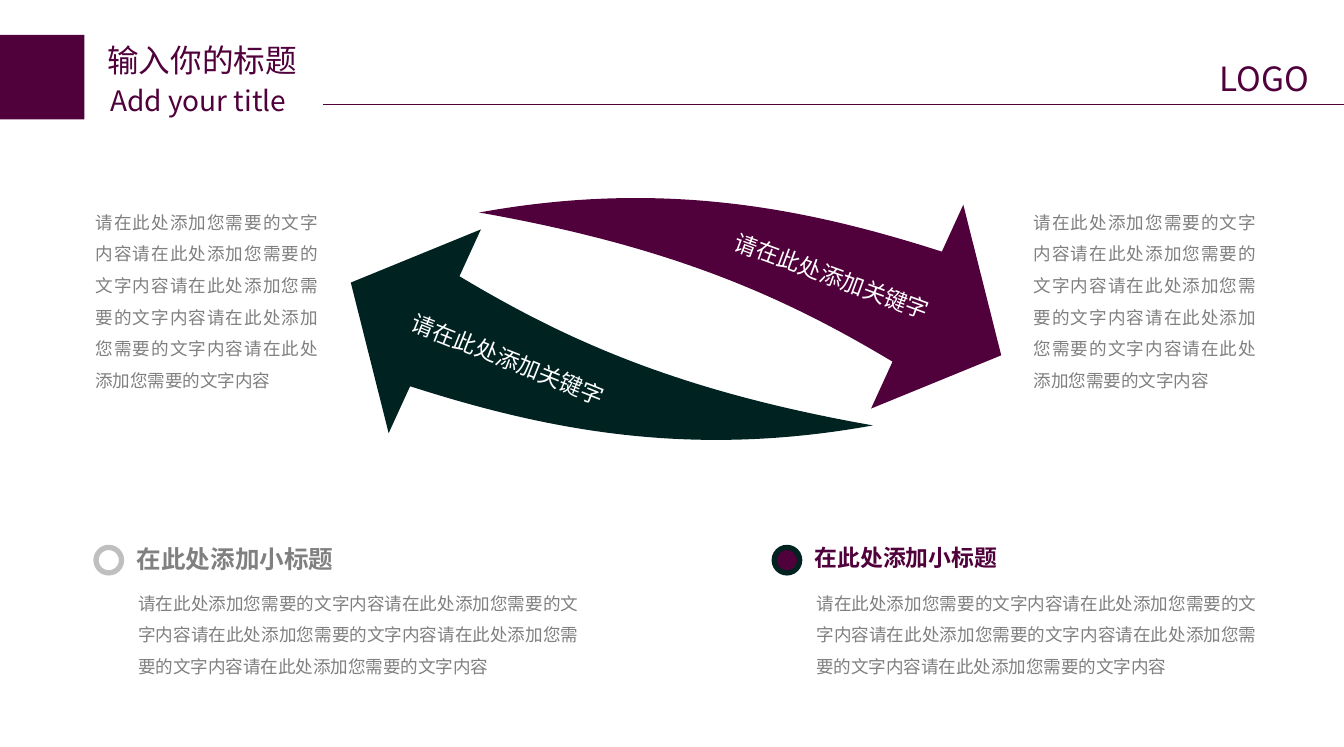
from lxml import etree
from pptx import Presentation
from pptx.dml.color import RGBColor
from pptx.enum.shapes import MSO_CONNECTOR, MSO_SHAPE
from pptx.enum.text import MSO_ANCHOR, PP_ALIGN
from pptx.oxml.ns import qn
from pptx.util import Pt

RECTANGLE, OVAL = MSO_SHAPE.RECTANGLE, MSO_SHAPE.OVAL
STRAIGHT = MSO_CONNECTOR.STRAIGHT
MIDDLE = MSO_ANCHOR.MIDDLE
LEFT, RIGHT, JUSTIFY = PP_ALIGN.LEFT, PP_ALIGN.RIGHT, PP_ALIGN.JUSTIFY

PLUM = RGBColor(0x50, 0x00, 0x3B)
DARK_TEAL = RGBColor(0x00, 0x22, 0x21)
GRAY = RGBColor(0x80, 0x80, 0x80)
LIGHT_GRAY = RGBColor(0xBF, 0xBF, 0xBF)
WHITE = RGBColor(0xFF, 0xFF, 0xFF)
CJK_FONT = "Noto Sans CJK SC"

SLIDE_W, SLIDE_H = 765.35, 425.2
BODY = "请在此处添加您需要的文字内容" * 5
KEYWORD = "请在此处添加关键字"
SUBTITLE = "在此处添加小标题"

# text, box, size, wrap
HEADER = [
    ("输入你的标题", (54, 19.8, 124.6, 28.8), 18, True),
    ("Add your title", (55.8, 43.9, 124.6, 26.6), 16, True),
    ("LOGO", (687.6, 29.5, 69.1, 30.2), 19, False),
]

# The upper arrow; a step of three points is a curve, a step of one a line.
ARROW_TAIL = (272.9, 121)
ARROW_STEPS = [
    [(376.6, 102.2), (457.9, 118.1), (536.4, 143.3)],
    [(548.6, 116.6)],
    [(570.2, 202.3)],
    [(496.1, 232.6)],
    [(508.3, 205.9)],
    [(447.1, 169.2), (383, 140.4), ARROW_TAIL],
]
ARROW_CENTER = (385, 181.6)

# colour, half turn, label left, label top, label rotation, label alignment
ARROWS = [
    (PLUM, False, 415.6, 146.2, 20.2, RIGHT),
    (DARK_TEAL, True, 231.1, 193.7, 21.8, LEFT),
]
SIDE_TEXT_LEFTS = [588.6, 54.4]

# left, dot fill, dot line, title size, title colour
SECTIONS = [
    (54.7, WHITE, LIGHT_GRAY, 14, GRAY),
    (440.9, PLUM, DARK_TEAL, 13, PLUM),
]


def points(*lengths):
    return [Pt(length) for length in lengths]


def write(shape, text, size, color, font=CJK_FONT, align=LEFT, bold=False,
          spacing=None, inset=7.2, wrap=True):
    frame = shape.text_frame
    frame.word_wrap = wrap
    frame.margin_left = frame.margin_right = Pt(inset)
    frame.margin_top = frame.margin_bottom = Pt(3.6 if inset == 7.2 else 3)
    paragraph = frame.paragraphs[0]
    paragraph.text = text
    paragraph.alignment = align
    if spacing:
        paragraph.line_spacing = spacing
    style = paragraph.font
    style.size, style.bold, style.name = Pt(size), bold, font
    style.color.rgb = color
    latin = paragraph._p.pPr.find(".//" + qn("a:latin"))
    latin.addnext(etree.Element(qn("a:ea"), typeface=CJK_FONT))


def paint(shape, fill, line=None):
    shape.shadow.inherit = False
    shape.fill.solid()
    shape.fill.fore_color.rgb = fill
    if line is None:
        shape.line.fill.background()
    else:
        shape.line.color.rgb = line
        shape.line.width = Pt(3)


def add_body(shapes, left, top, width, height):
    box = shapes.add_textbox(*points(left, top, width, height))
    write(box, BODY, 10, GRAY, "Arial", JUSTIFY, spacing=1.5, inset=0)


def add_backdrop(shapes):
    """Add the translucent white panel that covers the background."""
    panel = shapes.add_shape(RECTANGLE, *points(0, 0, SLIDE_W, SLIDE_H))
    paint(panel, WHITE)
    tint = panel._element.spPr.find(".//" + qn("a:srgbClr"))
    etree.SubElement(tint, qn("a:alpha"), val="40000")


def add_header(shapes):
    block = shapes.add_shape(RECTANGLE, *points(0, 19.9, 48.1, 48.1))
    paint(block, PLUM)
    for text, box, size, wrap in HEADER:
        write(shapes.add_textbox(*points(*box)), text, size, PLUM, wrap=wrap)
    rule = shapes.add_connector(STRAIGHT, *points(184.1, 59.5, SLIDE_W, 59.5))
    rule.line.color.rgb = PLUM
    rule.line.width = Pt(0.75)
    etree.SubElement(rule._element.spPr, qn("a:effectLst"))


def add_arrow(shapes, half_turn):
    """Draw straight legs through all points, then merge each curve's three legs."""
    outline = [ARROW_TAIL] + [point for step in ARROW_STEPS for point in step]
    if half_turn:
        center_x, center_y = ARROW_CENTER
        outline = [(2 * center_x - x, 2 * center_y - y) for x, y in outline]
    vertices = [points(x, y) for x, y in outline]
    builder = shapes.build_freeform(*vertices[0])
    builder.add_line_segments(vertices[1:], close=True)
    arrow = builder.convert_to_shape()

    legs = iter(list(arrow._element.iter(qn("a:lnTo"))))
    for step in ARROW_STEPS:
        step_legs = [next(legs) for _ in step]
        if len(step) == 3:
            curve = etree.Element(qn("a:cubicBezTo"))
            step_legs[0].addprevious(curve)
            for leg in step_legs:
                curve.append(leg[0])
                leg.getparent().remove(leg)
    return arrow


def add_arrows(shapes):
    for color, half_turn, left, top, rotation, align in ARROWS:
        paint(add_arrow(shapes, half_turn), color)
        label = shapes.add_shape(RECTANGLE, *points(left, top, 116.6, 21.6))
        paint(label, color)
        label.rotation = rotation
        label.text_frame.vertical_anchor = MIDDLE
        write(label, KEYWORD, 13, WHITE, "Calibri", align, inset=0, wrap=False)


def add_sections(shapes):
    for left, fill, line, size, color in SECTIONS:
        dot = shapes.add_shape(OVAL, *points(left, 311.6, 14.5, 14.5))
        paint(dot, fill, line)
        title = shapes.add_textbox(*points(left + 17.4, 306.7, 254.2, 22))
        write(title, SUBTITLE, size, color, bold=True, inset=5.7)
        add_body(shapes, left + 24, 328.4, 250.6, 59.8)


def main():
    deck = Presentation()
    deck.slide_width, deck.slide_height = points(SLIDE_W, SLIDE_H)
    shapes = deck.slides.add_slide(deck.slide_layouts[6]).shapes
    add_backdrop(shapes)
    add_header(shapes)
    add_arrows(shapes)
    for left in SIDE_TEXT_LEFTS:
        add_body(shapes, left, 111.5, 126.7, 113.8)
    add_sections(shapes)
    deck.save("out.pptx")


if __name__ == "__main__":
    main()
